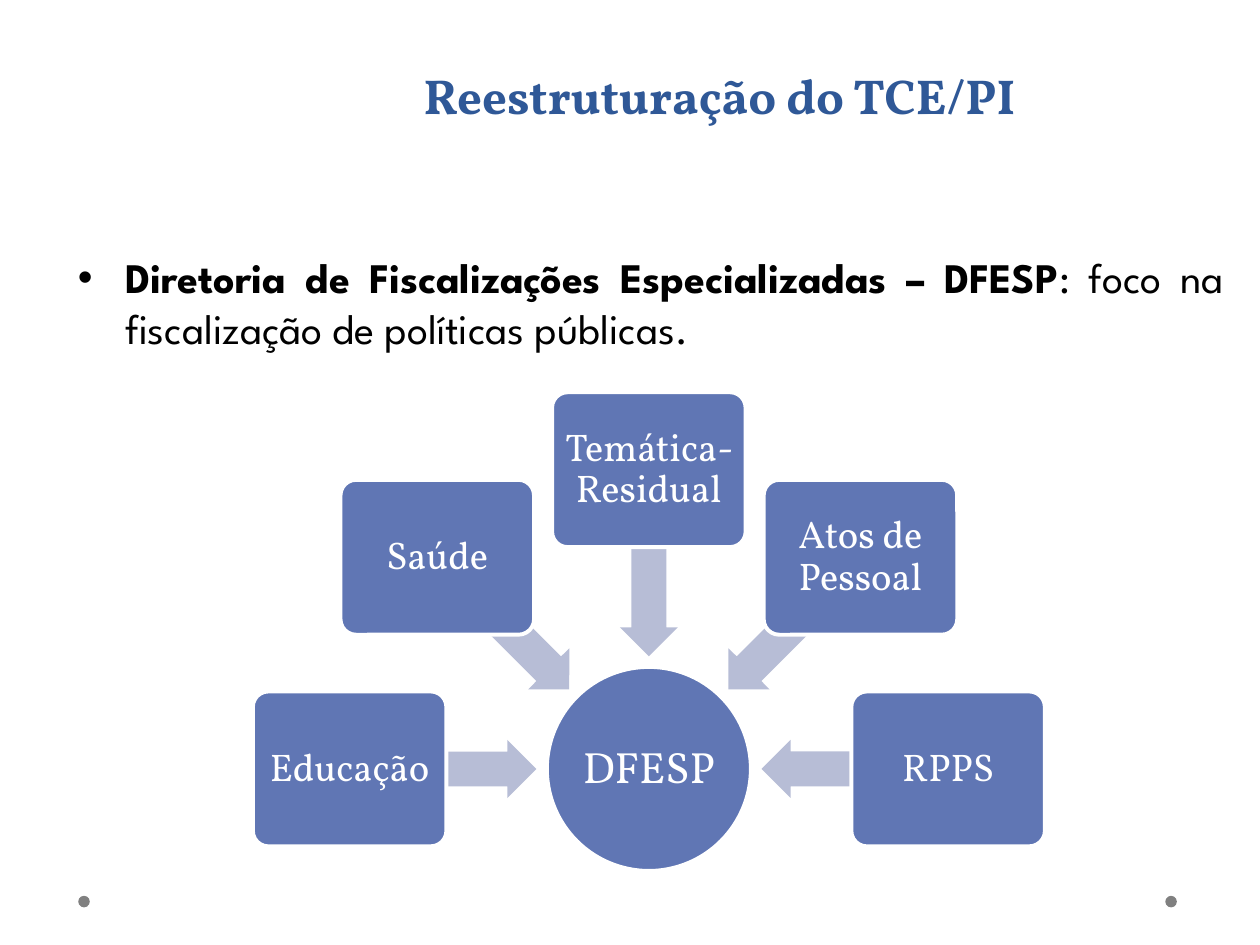
from dataclasses import dataclass
from math import cos, radians, sin

from lxml.etree import SubElement
from pptx import Presentation
from pptx.dml.color import RGBColor
from pptx.enum.shapes import MSO_SHAPE as Shape
from pptx.enum.text import MSO_ANCHOR as Anchor, PP_ALIGN as Align
from pptx.oxml.ns import qn
from pptx.util import Pt

COLORS = {
    "title": "2F5897",
    "body": "000000",
    "node": "6076B4",
    "arrow": "B7BDD6",
    "white": "FFFFFF",
    "dot": "808080",
}
SERIF, SANS = "Vollkorn", "League Spartan"
CENTER_X, CENTER_Y = 370.8, 439.4
HUB_SIZE = 116.6
TOPIC_RADIUS, ARROW_RADIUS = 171, 117.6
TOPIC_WIDTH, TOPIC_HEIGHT = 110.6, 88.5
ARROW_WIDTH, ARROW_HEIGHT = 106.5, 33.2


@dataclass
class Topic:
    label: str
    angle: int


TOPICS = [
    Topic("Educação", 180),
    Topic("Saúde", 225),
    Topic("Temática-Residual", 270),
    Topic("Atos de Pessoal", 315),
    Topic("RPPS", 360),
]


def style_run(run, font: str, size: float, color: str, bold: bool = False) -> None:
    run.font.name = font
    run.font.size = Pt(size)
    run.font.bold = bold
    run.font.color.rgb = RGBColor.from_string(COLORS[color])


def add_centered(slide, kind, x: float, y: float, width: float, height: float, color: str):
    shape = slide.shapes.add_shape(
        kind, Pt(x - width / 2), Pt(y - height / 2), Pt(width), Pt(height)
    )
    shape.shadow.inherit = False
    shape.fill.solid()
    shape.fill.fore_color.rgb = RGBColor.from_string(COLORS[color])
    shape.line.fill.background()
    return shape


def label_node(node, label: str, size: float, inset: float) -> None:
    node.line.color.rgb = RGBColor.from_string(COLORS["white"])
    node.line.width = Pt(2.25)
    frame = node.text_frame
    frame.word_wrap = True
    frame.vertical_anchor = Anchor.MIDDLE
    frame.margin_left = frame.margin_right = Pt(inset)
    frame.margin_top = frame.margin_bottom = Pt(inset)
    frame.text = label
    paragraph = frame.paragraphs[0]
    paragraph.alignment = Align.CENTER
    paragraph.line_spacing = 0.9
    style_run(paragraph.runs[0], SERIF, size, "white")


def polar(radius: float, angle: float) -> tuple[float, float]:
    turn = radians(angle)
    return CENTER_X + radius * cos(turn), CENTER_Y + radius * sin(turn)


def add_topic(slide, topic: Topic) -> None:
    arrow = add_centered(
        slide, Shape.LEFT_ARROW, *polar(ARROW_RADIUS, topic.angle),
        ARROW_WIDTH, ARROW_HEIGHT, "arrow",
    )
    arrow.adjustments[0] = 0.6
    arrow.adjustments[1] = 0.5
    arrow.rotation = topic.angle % 360
    box = add_centered(
        slide, Shape.ROUNDED_RECTANGLE, *polar(TOPIC_RADIUS, topic.angle),
        TOPIC_WIDTH, TOPIC_HEIGHT, "node",
    )
    box.adjustments[0] = 0.1
    label_node(box, topic.label, 22, 3.6)


def add_paragraph_box(slide, left: float, top: float, width: float, height: float):
    frame = slide.shapes.add_textbox(Pt(left), Pt(top), Pt(width), Pt(height)).text_frame
    frame.word_wrap = True
    return frame.paragraphs[0]


def add_title(slide) -> None:
    title = add_paragraph_box(slide, 133.2, 9.4, 555.8, 67)
    title.text = "Reestruturação do TCE/PI"
    title.alignment = Align.CENTER
    title.line_spacing = Pt(58)
    style_run(title.runs[0], SERIF, 28, "title", True)


def add_description(slide) -> None:
    description = add_paragraph_box(slide, 37.4, 140.4, 668.9, 67.7)
    properties = description._p.get_or_add_pPr()
    properties.set("marL", str(Pt(27)))
    properties.set("indent", str(Pt(-27)))
    SubElement(properties, qn("a:buFont"), typeface="Arial")
    SubElement(properties, qn("a:buChar"), char="•")
    description.alignment = Align.JUSTIFY
    for text, bold in (
        ("Diretoria de Fiscalizações Especializadas – DFESP", True),
        (": foco na fiscalização de políticas públicas.", False),
    ):
        run = description.add_run()
        run.text = text
        style_run(run, SANS, 24, "body", bold)


def main() -> None:
    presentation = Presentation()
    presentation.slide_width, presentation.slide_height = Pt(720), Pt(540)
    slide = presentation.slides.add_slide(presentation.slide_layouts[6])
    for dot_x in (669.2, 48):
        add_centered(slide, Shape.OVAL, dot_x, 515.2, 6.6, 6.6, "dot")
    add_title(slide)
    add_description(slide)
    hub = add_centered(slide, Shape.OVAL, CENTER_X, CENTER_Y, HUB_SIZE, HUB_SIZE, "node")
    label_node(hub, "DFESP", 25, 1.4)
    for topic in TOPICS:
        add_topic(slide, topic)
    presentation.save("out.pptx")


if __name__ == "__main__":
    main()
